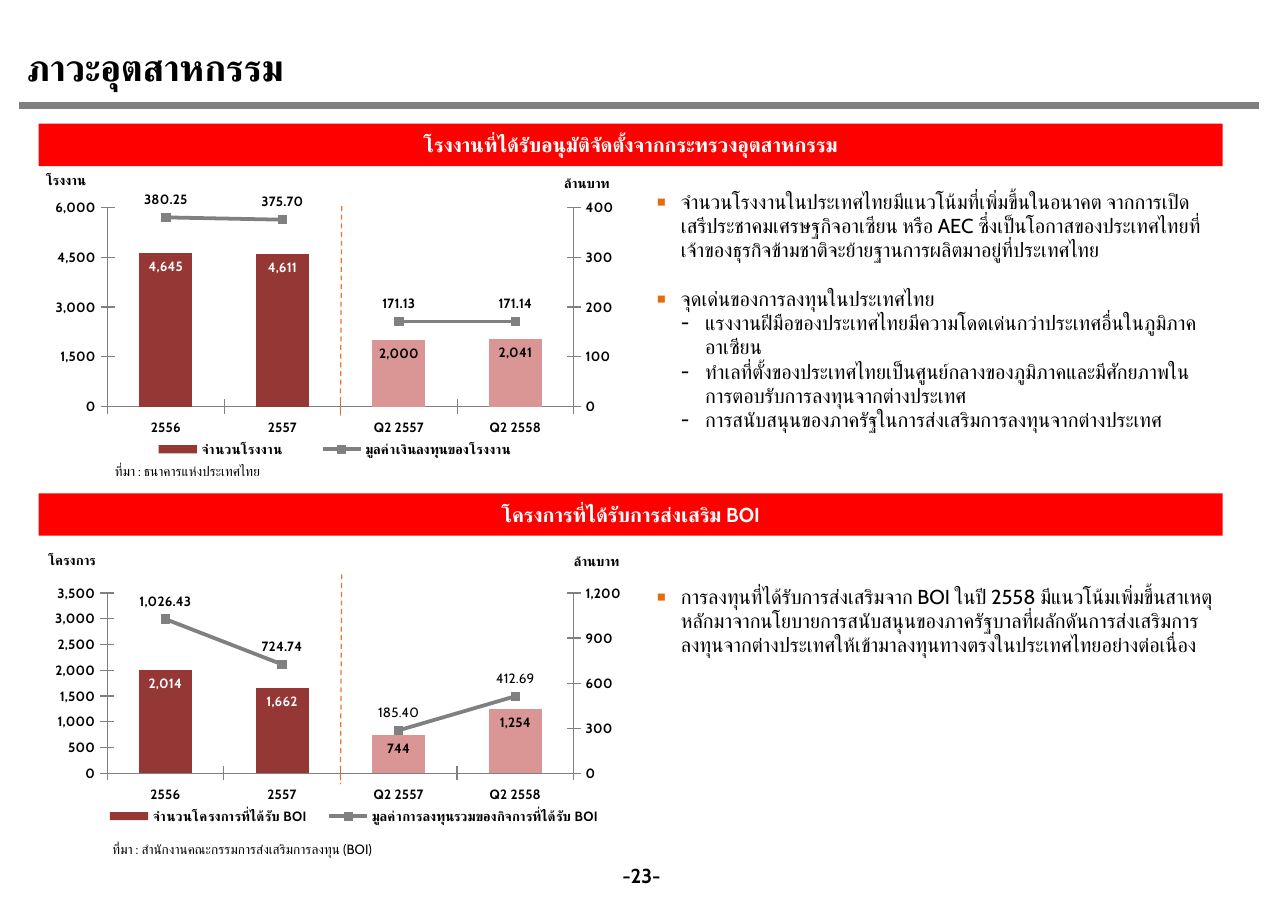
"""Build the industry conditions slide with two combined charts and their commentary."""
from copy import deepcopy

from lxml import etree
from pptx import Presentation
from pptx.chart.data import CategoryChartData
from pptx.dml.color import RGBColor
from pptx.enum.chart import (XL_CHART_TYPE, XL_LABEL_POSITION, XL_LEGEND_POSITION,
                             XL_MARKER_STYLE, XL_TICK_MARK)
from pptx.enum.dml import MSO_LINE
from pptx.enum.shapes import MSO_CONNECTOR, MSO_SHAPE
from pptx.enum.text import MSO_ANCHOR, MSO_AUTO_SIZE, PP_ALIGN
from pptx.oxml import parse_xml
from pptx.oxml.ns import nsdecls, qn
from pptx.util import Inches, Pt

COLORS = {name: RGBColor.from_string(value) for name, value in {
    "black": "000000", "white": "FFFFFF", "gray": "808080", "red": "FF0000",
    "dark": "953735", "light": "D99694", "orange": "F17526", "bullet": "E46C0A"}.items()}
FONT = "Cabin"


def style_font(font, size, bold=False, color="black"):
    """Set the face, size, weight and colour of a font."""
    font.name, font.size, font.bold = FONT, Pt(size), bold
    font.color.rgb = COLORS[color]


def manual_layout(x, y, width, height, inner=False):
    """Return a chart layout element in fractions of the chart."""
    target = '<c:layoutTarget val="inner"/>' if inner else ""
    return parse_xml(
        f'<c:layout {nsdecls("c")}><c:manualLayout>{target}<c:xMode val="edge"/>'
        f'<c:yMode val="edge"/><c:x val="{x}"/><c:y val="{y}"/><c:w val="{width}"/>'
        f'<c:h val="{height}"/></c:manualLayout></c:layout>')


deck = Presentation()
deck.slide_width, deck.slide_height = Inches(10.63), Inches(7.5)
page = deck.slides.add_slide(deck.slide_layouts[3])
shapes = page.shapes

title = shapes.title
title.left, title.top, title.width, title.height = map(Inches, (0.12, 0.24, 10.28, 0.62))
title.text_frame.text = "ภาวะอุตสาหกรรม"
title.text_frame.vertical_anchor = MSO_ANCHOR.MIDDLE
title.text_frame.paragraphs[0].alignment = PP_ALIGN.LEFT
style_font(title.text_frame.paragraphs[0].font, 22, True)

panels = [
    {"frame": (0.28, 1.56, 4.87, 2.36), "plot": (0.125, 0.065, 0.79, 0.696),
     "legend": (0.15, 0.865, 0.72, 0.09), "left": (6000, 1500), "right": (400, 100),
     "columns": ("จำนวนโรงงาน", (4645, 4611, 2000, 2041)),
     "years": ("มูลค่าเงินลงทุนของโรงงาน", (380.25, 375.7, None, None)),
     "quarters": (None, None, 171.13, 171.14), "own_labels": {}},
    {"frame": (0.25, 4.74, 5.04, 2.36), "plot": (0.126, 0.065, 0.764, 0.63),
     "legend": (0.1, 0.8, 0.86, 0.09), "left": (3500, 500), "right": (1200, 300),
     "columns": ("จำนวนโครงการที่ได้รับ BOI", (2014, 1662, 744, 1254)),
     "years": ("มูลค่าการลงทุนรวมของกิจการที่ได้รับ BOI", (1026.43, 724.74, None, None)),
     "quarters": (None, None, 285.4, 512.69), "own_labels": {2: "185.40", 3: "412.69"}},
]
for panel in panels:
    data = CategoryChartData()
    data.categories = ["2556", "2557", "Q2 2557", "Q2 2558"]
    data.add_series(*panel["columns"], number_format="#,##0")
    data.add_series(*panel["years"], number_format="#,##0.00")
    data.add_series("Series 3", panel["quarters"], number_format="#,##0.00")
    chart = shapes.add_chart(XL_CHART_TYPE.COLUMN_CLUSTERED,
                             *map(Inches, panel["frame"]), data).chart
    style_font(chart.font, 8, True)
    chart.has_title = False
    chart.has_legend = True
    chart.legend.position = XL_LEGEND_POSITION.BOTTOM
    chart.legend.include_in_layout = False
    style_font(chart.legend.font, 8, True)

    value_axis = chart.value_axis
    value_axis.has_major_gridlines = False
    value_axis.minimum_scale = 0
    value_axis.maximum_scale, value_axis.major_unit = panel["left"]
    value_axis.tick_labels.number_format = "#,##0"
    value_axis.tick_labels.number_format_is_linked = False
    for axis in (chart.category_axis, value_axis):
        axis.major_tick_mark = XL_TICK_MARK.CROSS
        axis.format.line.color.rgb = COLORS["gray"]
        axis.format.line.width = Pt(0.75)
        style_font(axis.tick_labels.font, 8, True)

    plot_area = chart.element.find(".//" + qn("c:plotArea"))
    legend = chart.element.find(".//" + qn("c:legend"))
    for parent in (plot_area, legend):
        for old_layout in parent.findall(qn("c:layout")):
            parent.remove(old_layout)
    plot_area.insert(0, manual_layout(*panel["plot"], inner=True))
    bar_chart = plot_area.find(qn("c:barChart"))
    line_chart = parse_xml(
        f'<c:lineChart {nsdecls("c")}><c:grouping val="standard"/><c:varyColors val="0"/>'
        '<c:marker val="1"/><c:axId val="501"/><c:axId val="502"/></c:lineChart>')
    for series in bar_chart.findall(qn("c:ser"))[1:]:
        for bar_only in series.findall(qn("c:invertIfNegative")):
            series.remove(bar_only)
        line_chart.find(qn("c:marker")).addprevious(series)
    bar_chart.addnext(line_chart)

    right_axis = deepcopy(plot_area.find(qn("c:valAx")))
    hidden_axis = deepcopy(plot_area.find(qn("c:catAx")))
    maximum, step = panel["right"]
    for axis, changes in (
            (right_axis, {"axId": 502, "crossAx": 501, "axPos": "r", "crosses": "max",
                          "scaling/c:max": maximum, "majorUnit": step}),
            (hidden_axis, {"axId": 501, "crossAx": 502, "delete": 1})):
        for tag, value in changes.items():
            axis.xpath("c:" + tag)[0].set("val", str(value))
    plot_area.find(qn("c:valAx")).addnext(right_axis)
    right_axis.addnext(hidden_axis)

    hidden_entry = parse_xml(f'<c:legendEntry {nsdecls("c")}><c:idx val="2"/>'
                             '<c:delete val="1"/></c:legendEntry>')
    legend.find(qn("c:legendPos")).addnext(hidden_entry)
    hidden_entry.addnext(manual_layout(*panel["legend"]))

    column_plot, line_plot = chart.plots
    column_plot.gap_width = 120
    column_plot.vary_by_categories = False
    columns = column_plot.series[0]
    columns.format.fill.solid()
    columns.format.fill.fore_color.rgb = COLORS["dark"]
    for line in line_plot.series:
        line.smooth = False
        line.format.line.color.rgb = COLORS["gray"]
        line.format.line.width = Pt(2.25)
        line.marker.style, line.marker.size = XL_MARKER_STYLE.SQUARE, 5
        line.marker.format.fill.solid()
        line.marker.format.fill.fore_color.rgb = COLORS["gray"]
        line.marker.format.line.color.rgb = COLORS["gray"]
    for series, position, pattern, color in (
            (columns, XL_LABEL_POSITION.INSIDE_END, "#,##0", "white"),
            *((line, XL_LABEL_POSITION.ABOVE, "#,##0.00", "black")
              for line in line_plot.series)):
        labels = series.data_labels
        labels.show_value = True
        labels.position = position
        labels.number_format, labels.number_format_is_linked = pattern, False
        style_font(labels.font, 8, True, color)
    for index in (2, 3):
        point = columns.points[index]
        point.format.fill.solid()
        point.format.fill.fore_color.rgb = COLORS["light"]
        style_font(point.data_label.font, 8, True)
        point.data_label.position = XL_LABEL_POSITION.INSIDE_END
    for index, text in panel["own_labels"].items():
        label = line_plot.series[1].points[index].data_label
        label.text_frame.text = text
        style_font(label.text_frame.paragraphs[0].runs[0].font, 8)
        label.position = XL_LABEL_POSITION.ABOVE

for top, text in ((1.02, "โรงงานที่ได้รับอนุมัติจัดตั้งจากกระทรวงอุตสาหกรรม"),
                  (4.07, "โครงการที่ได้รับการส่งเสริม BOI")):
    banner = shapes.add_shape(MSO_SHAPE.RECTANGLE, *map(Inches, (0.32, top, 9.77, 0.35)))
    banner.shadow.inherit = False
    banner.fill.solid()
    banner.fill.fore_color.rgb = COLORS["red"]
    banner.line.fill.background()
    banner.text_frame.text = text
    banner.text_frame.vertical_anchor = MSO_ANCHOR.MIDDLE
    banner.text_frame.paragraphs[0].alignment = PP_ALIGN.CENTER
    style_font(banner.text_frame.paragraphs[0].font, 12, True, "white")

for left, top, width, text, size, bold, align in (
        (0.26, 1.37, 0.57, "โรงงาน", 8, True, PP_ALIGN.CENTER),
        (4.53, 1.39, 0.63, "ล้านบาท", 8, True, PP_ALIGN.CENTER),
        (0.27, 4.5, 0.65, "โครงการ", 8, True, PP_ALIGN.CENTER),
        (4.61, 4.51, 0.63, "ล้านบาท", 8, True, PP_ALIGN.CENTER),
        (0.85, 3.77, 1.62, "ที่มา : ธนาคารแห่งประเทศไทย", 8, False, PP_ALIGN.LEFT),
        (0.83, 6.89, 2.71, "ที่มา : สำนักงานคณะกรรมการส่งเสริมการลงทุน (BOI)", 8, False, PP_ALIGN.LEFT),
        (5, 7.1, 0.59, "-23-", 12, True, PP_ALIGN.CENTER)):
    box = shapes.add_textbox(*map(Inches, (left, top, width, 0.24)))
    box.text_frame.word_wrap = False
    box.text_frame.text = text
    box.text_frame.vertical_anchor = MSO_ANCHOR.MIDDLE
    box.text_frame.paragraphs[0].alignment = align
    style_font(box.text_frame.paragraphs[0].font, size, bold)

comments = [
    (1, (5.32, 1.51, 4.77, 2.32), [
        ("▪", "จำนวนโรงงานในประเทศไทยมีแนวโน้มที่เพิ่มขึ้นในอนาคต จากการเปิดเสรีประชาคมเศรษฐกิจอาเซียน หรือ AEC ซึ่งเป็นโอกาสของประเทศไทยที่เจ้าของธุรกิจข้ามชาติจะย้ายฐานการผลิตมาอยู่ที่ประเทศไทย"),
        ("▪", "จุดเด่นของการลงทุนในประเทศไทย"),
        ("-", "แรงงานฝีมือของประเทศไทยมีความโดดเด่นกว่าประเทศอื่นในภูมิภาคอาเซียน"),
        ("-", "ทำเลที่ตั้งของประเทศไทยเป็นศูนย์กลางของภูมิภาคและมีศักยภาพในการตอบรับการลงทุนจากต่างประเทศ"),
        ("-", "การสนับสนุนของภาครัฐในการส่งเสริมการลงทุนจากต่างประเทศ")]),
    (2, (5.32, 4.77, 4.92, 0.91), [
        ("▪", "การลงทุนที่ได้รับการส่งเสริมจาก BOI ในปี 2558 มีแนวโน้มเพิ่มขึ้นสาเหตุหลักมาจากนโยบายการสนับสนุนของภาครัฐบาลที่ผลักดันการส่งเสริมการลงทุนจากต่างประเทศให้เข้ามาลงทุนทางตรงในประเทศไทยอย่างต่อเนื่อง")]),
]
for index, frame, items in comments:
    body = page.placeholders[index]
    body.left, body.top, body.width, body.height = map(Inches, frame)
    body.text_frame.auto_size = MSO_AUTO_SIZE.NONE
    body.text_frame.text = "\n".join(text for _, text in items)
    for position, (para, (mark, _)) in enumerate(zip(body.text_frame.paragraphs, items)):
        main = mark == "▪"
        para.space_before = Pt(14.5 if main and position else 0)
        properties = para._p.get_or_add_pPr()
        properties.set("marL", str(Inches(0.2 if main else 0.4)))
        properties.set("indent", str(Inches(-0.2)))
        if main:
            color = etree.SubElement(properties, qn("a:buClr"))
            etree.SubElement(color, qn("a:srgbClr"), val=str(COLORS["bullet"]))
            etree.SubElement(properties, qn("a:buSzPct"), val="120000")
        etree.SubElement(properties, qn("a:buFont"), typeface=FONT)
        etree.SubElement(properties, qn("a:buChar"), char=mark)
        style_font(para.font, 12)

for start, end, color, width, dash in (
        ((0.16, 0.87), (10.39, 0.87), "gray", 4.5, None),
        ((2.82, 1.7), (2.81, 3.43), "orange", 0.75, MSO_LINE.DASH),
        ((2.82, 4.74), (2.81, 6.47), "orange", 0.75, MSO_LINE.DASH)):
    rule = shapes.add_connector(MSO_CONNECTOR.STRAIGHT, *map(Inches, start + end))
    rule.line.color.rgb = COLORS[color]
    rule.line.width = Pt(width)
    rule.line.dash_style = dash
    etree.SubElement(rule._element.spPr, qn("a:effectLst"))

charts = [shape.chart.element for shape in shapes if shape.has_chart]
for root in [page.element, *charts]:
    for latin in list(root.iter(qn("a:latin"))):
        latin.addnext(parse_xml(f'<a:cs {nsdecls("a")} typeface="{FONT}"/>'))

deck.save("out.pptx")
